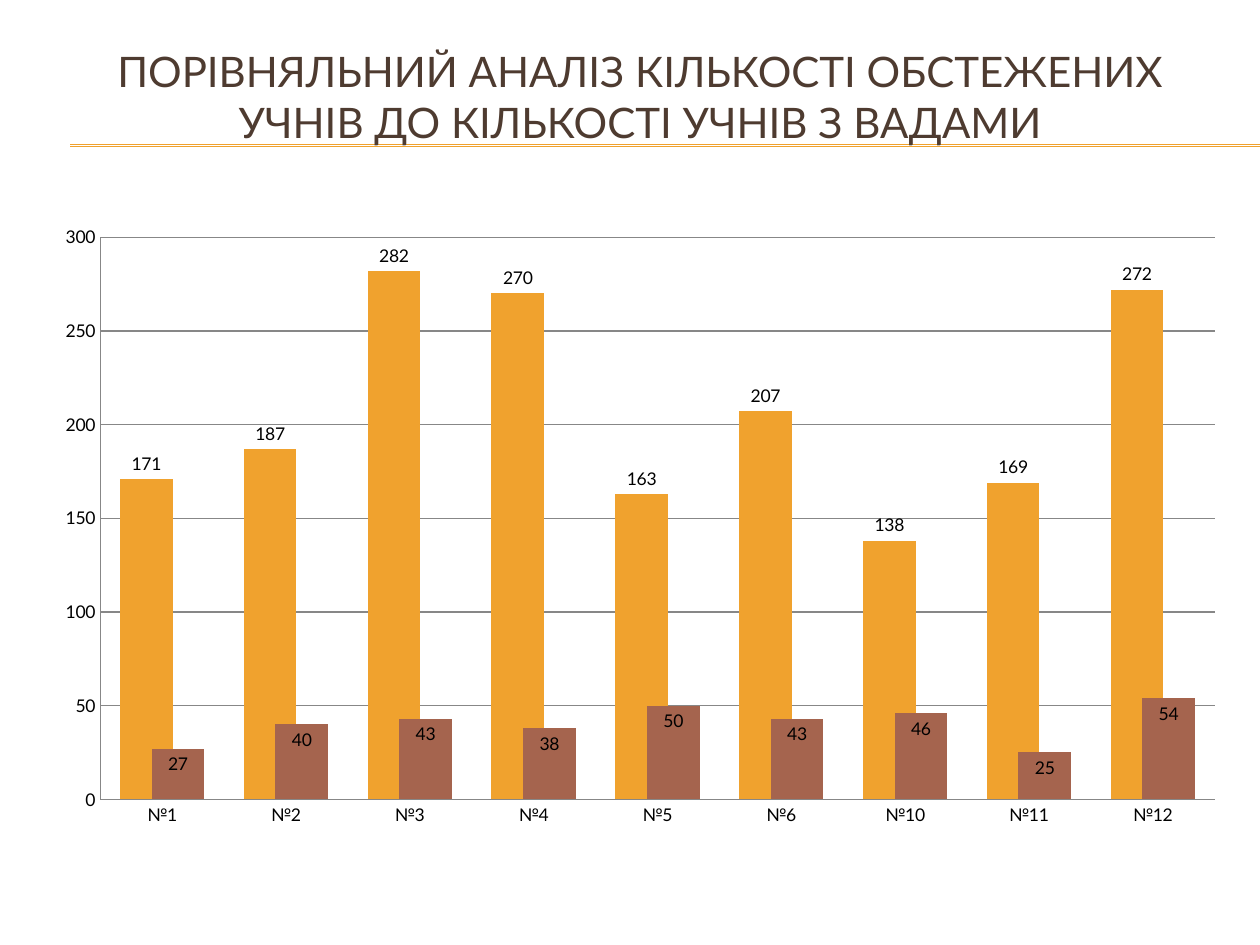
from lxml import etree
from pptx import Presentation
from pptx.chart import data as chart_data
from pptx.dml.color import RGBColor
from pptx.enum import chart as charts, shapes, text
from pptx.oxml.ns import qn
from pptx.util import Cm, Pt


def paint(color_format, value):
    color_format.rgb = RGBColor.from_string(value)


FONT = "Lato"
GOLD = "F0A22E"
RUST = "A5644E"
BROWN = "4E3B30"
GRAY = "878787"
BLACK = "000000"

deck = Presentation()
deck.slide_width = Cm(25.4)
deck.slide_height = Cm(19.05)
page = deck.slides.add_slide(deck.slide_layouts[6])

for top in (2.92, 2.95):
    rule = page.shapes.add_connector(
        shapes.MSO_CONNECTOR.STRAIGHT, Cm(1.42), Cm(top), Cm(25.4), Cm(top)
    )
    paint(rule.line.color, GOLD)
    rule.line.width = Pt(0.75)
    etree.SubElement(rule._element.spPr, qn("a:effectLst"))

title = page.shapes.add_textbox(Cm(0.84), Cm(1.27), Cm(24.13), Cm(2.34))
frame = title.text_frame
frame.text = "ПОРІВНЯЛЬНИЙ АНАЛІЗ КІЛЬКОСТІ ОБСТЕЖЕНИХ УЧНІВ ДО КІЛЬКОСТІ УЧНІВ З ВАДАМИ"
frame.word_wrap = True
frame.vertical_anchor = text.MSO_ANCHOR.MIDDLE
frame.margin_bottom = Cm(1.12)
para = frame.paragraphs[0]
para.alignment = text.PP_ALIGN.CENTER
span = para.runs[0]
span.font.name = FONT
span.font.size = Pt(24)
paint(span.font.color, BROWN)

counts = chart_data.CategoryChartData()
counts.categories = [f"№{number}" for number in (1, 2, 3, 4, 5, 6, 10, 11, 12)]
counts.add_series("Series 1", (171, 187, 282, 270, 163, 207, 138, 169, 272))
counts.add_series("Series 2", (27, 40, 43, 38, 50, 43, 46, 25, 54))
chart = page.shapes.add_chart(
    charts.XL_CHART_TYPE.COLUMN_CLUSTERED,
    Cm(0.84), Cm(4.32), Cm(24.13), Cm(12.57), counts,
).chart
chart.has_legend = False
chart.has_title = False
chart.font.name = FONT
chart.font.size = Pt(10)
paint(chart.font.color, BLACK)

plot = chart.plots[0]
plot.gap_width = 75
plot.overlap = 40
plot.vary_by_categories = False
positions = charts.XL_LABEL_POSITION
styles = ((GOLD, positions.OUTSIDE_END), (RUST, positions.INSIDE_END))
for series, (color, position) in zip(plot.series, styles):
    series.format.fill.solid()
    paint(series.format.fill.fore_color, color)
    labels = series.data_labels
    labels.show_value = True
    labels.position = position

values = chart.value_axis
values.minimum_scale = 0
values.maximum_scale = 300
values.major_unit = 50
values.has_major_gridlines = True
for axis in (chart.category_axis, values):
    axis.major_tick_mark = charts.XL_TICK_MARK.NONE
    axis.minor_tick_mark = charts.XL_TICK_MARK.NONE
for item in (chart.category_axis, values, values.major_gridlines):
    paint(item.format.line.color, GRAY)
    item.format.line.width = Pt(0.75)

deck.save("out.pptx")
